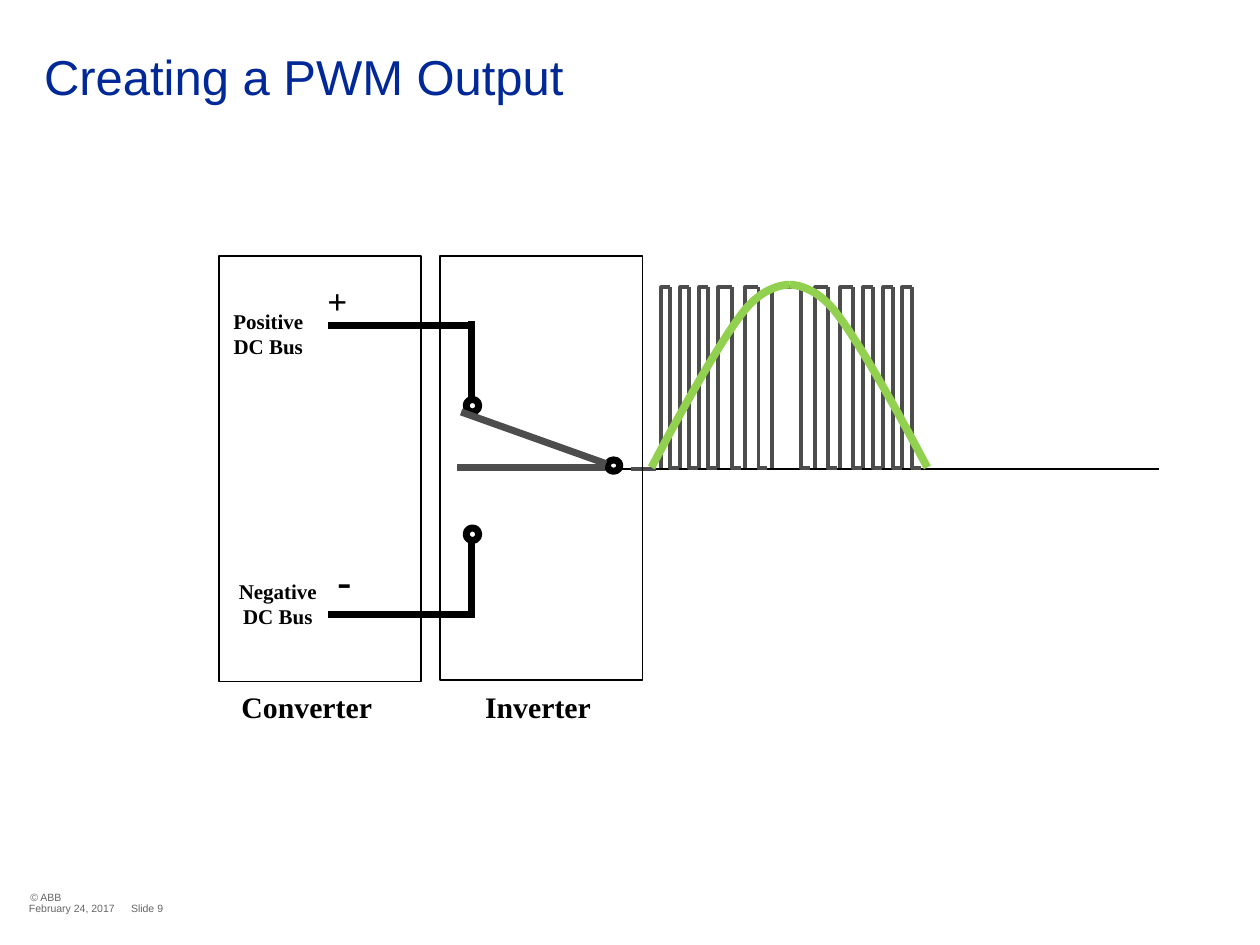
from dataclasses import dataclass
from typing import Iterable

import pptx
import pptx.dml.color
import pptx.enum.shapes
import pptx.enum.text
import pptx.oxml.xmlchemy
import pptx.util

ALIGN = pptx.enum.text.PP_ALIGN
ANCHOR = pptx.enum.text.MSO_ANCHOR
SHAPE = pptx.enum.shapes.MSO_SHAPE
COLS, ROWS = 100, 75
Point = tuple[float, float]


@dataclass(frozen=True)
class Theme:
    title: str = "002897"
    footer: str = "666666"
    ink: str = "000000"
    paper: str = "FFFFFF"
    pulse: str = "4D4D4D"
    sine: str = "92D050"
    sans: str = "Arial"
    serif: str = "Times New Roman"
    title_size: float = 28
    minus_size: float = 24
    plus_size: float = 20
    caption_size: float = 17
    bus_size: float = 12
    footer_size: float = 6
    thin: float = 1
    medium: float = 2.25
    thick: float = 4
    heavy: float = 4.5


@dataclass(frozen=True)
class Box:
    col: float
    row: float
    cols: float
    rows: float


@dataclass(frozen=True)
class Label:
    box: Box
    lines: tuple[str, ...]
    size: float
    align: ALIGN = ALIGN.CENTER


@dataclass(frozen=True)
class Footer:
    box: Box
    text: str


@dataclass(frozen=True)
class Bus:
    rail_row: float
    wire_start: float
    contact_row: float


@dataclass(frozen=True)
class Pulse:
    rise: float
    fall: float


T = Theme()
HIGH, LOW, TAIL = 22.8, 37.15, 0.7
CREST = 62.65

STAGES = (Box(17.4, 20.3, 16, 33.8), Box(34.9, 20.3, 16.1, 33.7))
LABELS = (
    Label(Box(17.7, 54.2, 13.3, 3.9), ("Converter",), T.caption_size),
    Label(Box(37.3, 54.2, 10.8, 3.9), ("Inverter",), T.caption_size),
    Label(Box(17.1, 24, 8.4, 4.9), ("Positive", "DC Bus"), T.bus_size),
    Label(Box(17.6, 45.4, 8.9, 4.9), ("Negative", "DC Bus"), T.bus_size),
    Label(Box(25, 21.7, 3.6, 4.3), ("+",), T.plus_size, ALIGN.LEFT),
    Label(Box(25.8, 43.5, 3.1, 4.9), ("-",), T.minus_size, ALIGN.LEFT),
)
FOOTERS = (
    Footer(Box(2.4, 70.7, 12.2, 1), "© ABB"),
    Footer(Box(10.4, 71.5, 5.3, 1.1), "Slide 9"),
    Footer(Box(2.3, 71.5, 7.9, 1.1), "February 24, 2017"),
)
BUSES = (Bus(25.8, 25.5, 32.2), Bus(48.8, 49, 42.4))
PULSES = (
    Pulse(52.5, 53.2), Pulse(54, 54.7), Pulse(55.5, 56.2), Pulse(57, 58.1),
    Pulse(59.1, 60.2), Pulse(61.3, 63.6), Pulse(64.7, 65.7), Pulse(66.7, 67.7),
    Pulse(68.5, 69.3), Pulse(70.1, 70.9), Pulse(71.6, 72.4),
)
HALF_WAVE = (
    ((51.7, 37.1), (54.3, 32.2), (57, 27.4), (58.8, 25)),
    ((58.8, 25), (60.6, 22.5), (CREST, 22.6), (CREST, 22.6)),
)

prs = pptx.Presentation()
prs.slide_width = pptx.util.Inches(10)
prs.slide_height = pptx.util.Inches(7.5)


def x(col: float) -> int:
    return round(prs.slide_width * col / COLS)


def y(row: float) -> int:
    return round(prs.slide_height * row / ROWS)


def place(b: Box) -> tuple[int, int, int, int]:
    return x(b.col), y(b.row), x(b.cols), y(b.rows)


def rgb(color: str) -> pptx.dml.color.RGBColor:
    return pptx.dml.color.RGBColor.from_string(color)


def stroke(sp, color: str, width: float) -> None:
    sp.line.color.rgb = rgb(color)
    sp.line.width = pptx.util.Pt(width)


def set_margins(tf, left: float, top: float, right: float, bottom: float) -> None:
    tf.margin_left, tf.margin_right = x(left), x(right)
    tf.margin_top, tf.margin_bottom = y(top), y(bottom)


def add_run(p, text: str, font: str, size: float, color: str, bold: bool = False) -> None:
    r = p.add_run()
    r.text = text
    r.font.name, r.font.size, r.font.bold = font, pptx.util.Pt(size), bold
    r.font.color.rgb = rgb(color)


def draw_title(s, text: str) -> None:
    sp = s.shapes.title
    sp.left, sp.top, sp.width, sp.height = place(Box(1.5, 0.8, 99, 16.6))
    tf = sp.text_frame
    tf.auto_size = pptx.enum.text.MSO_AUTO_SIZE.NONE
    tf.vertical_anchor = ANCHOR.TOP
    set_margins(tf, 2, 3.4, 2.4, 0)
    p = tf.paragraphs[0]
    p.alignment, p.line_spacing = ALIGN.LEFT, 0.9
    add_run(p, text, T.sans, T.title_size, T.title)


def draw_footer(s, item: Footer) -> None:
    tf = s.shapes.add_textbox(*place(item.box)).text_frame
    tf.word_wrap, tf.vertical_anchor = True, ANCHOR.MIDDLE
    set_margins(tf, 0, 0, 0, 0)
    add_run(tf.paragraphs[0], item.text, T.sans, T.footer_size, T.footer)


def draw_label(s, item: Label) -> None:
    tf = s.shapes.add_textbox(*place(item.box)).text_frame
    tf.word_wrap = True
    set_margins(tf, 1, 0.5, 1, 0.5)
    for i, line in enumerate(item.lines):
        p = tf.add_paragraph() if i else tf.paragraphs[0]
        p.alignment = item.align
        add_run(p, line, T.serif, item.size, T.ink, True)


def draw_line(s, a: Point, b: Point, color: str, width: float) -> None:
    sp = s.shapes.add_connector(
        pptx.enum.shapes.MSO_CONNECTOR.STRAIGHT, x(a[0]), y(a[1]), x(b[0]), y(b[1]))
    stroke(sp, color, width)
    sp._element.spPr.append(pptx.oxml.xmlchemy.OxmlElement("a:effectLst"))


def draw_shape(s, kind: SHAPE, box: Box, width: float, fill: str = "") -> None:
    sp = s.shapes.add_shape(kind, *place(box))
    sp.shadow.inherit = False
    if fill:
        sp.fill.solid()
        sp.fill.fore_color.rgb = rgb(fill)
    else:
        sp.fill.background()
    stroke(sp, T.ink, width)


def draw_path(s, points: Iterable[Point], color: str, width: float) -> None:
    first, *rest = [(x(c), y(r)) for c, r in points]
    fb = s.shapes.build_freeform(*first)
    fb.add_line_segments(rest, close=False)
    sp = fb.convert_to_shape()
    sp.shadow.inherit = False
    sp.fill.background()
    stroke(sp, color, width)


def draw_bus(s, bus: Bus) -> None:
    draw_line(s, (37.4, bus.wire_start), (37.4, bus.contact_row), T.ink, T.thick)
    draw_shape(s, SHAPE.OVAL, Box(37, bus.contact_row - 0.5, 1, 1), T.thick, T.paper)
    draw_line(s, (37.7, bus.rail_row), (26, bus.rail_row), T.ink, T.thick)


def draw_pulse(s, pulse: Pulse) -> None:
    rise = [(pulse.rise, LOW), (pulse.rise, HIGH), (pulse.fall, HIGH)]
    fall = [(pulse.fall, HIGH), (pulse.fall, LOW), (pulse.fall + TAIL, LOW)]
    for edge in (rise, fall):
        draw_path(s, edge, T.pulse, T.medium)


def bezier(a: Point, b: Point, c: Point, d: Point, steps: int = 16) -> list[Point]:
    def at(t: float, i: int) -> float:
        u = 1 - t
        return u**3 * a[i] + 3 * u * u * t * b[i] + 3 * u * t * t * c[i] + t**3 * d[i]
    return [(at(k / steps, 0), at(k / steps, 1)) for k in range(steps + 1)]


def main() -> None:
    s = prs.slides.add_slide(prs.slide_layouts[5])
    draw_title(s, "Creating a PWM Output")
    for item in FOOTERS:
        draw_footer(s, item)
    for bus in BUSES:
        draw_bus(s, bus)
    draw_line(s, (49.2, 37.2), (92, 37.2), T.ink, T.thin)
    draw_shape(s, SHAPE.OVAL, Box(48.2, 36.5, 1, 0.9), T.thick, T.paper)
    draw_line(s, (50.1, 37.2), (52.1, 37.2), T.pulse, T.medium)
    for pulse in PULSES:
        draw_pulse(s, pulse)
    for stage in STAGES:
        draw_shape(s, SHAPE.RECTANGLE, stage, T.thin)
    for label in LABELS:
        draw_label(s, label)
    draw_line(s, (36.3, 37.1), (48, 37.1), T.pulse, T.thick)
    draw_line(s, (48.1, 36.8), (36.6, 32.7), T.pulse, T.thick)
    left = [pt for curve in HALF_WAVE for pt in bezier(*curve)]
    for half in (left, [(2 * CREST - c, r) for c, r in left]):
        draw_path(s, half, T.sine, T.heavy)
    prs.save("out.pptx")


if __name__ == "__main__":
    main()
